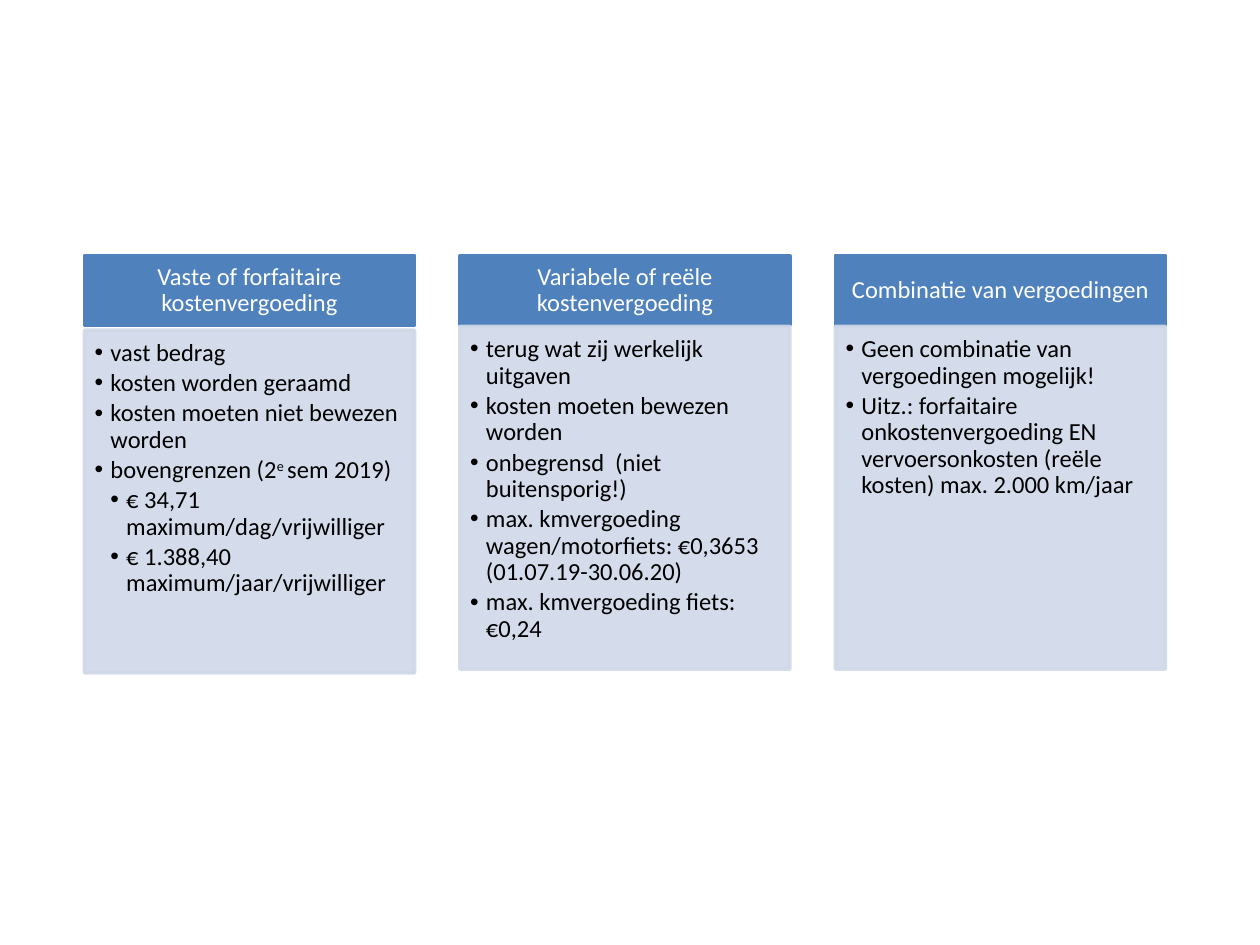
from lxml import etree
from pptx import Presentation
from pptx.dml.color import RGBColor
from pptx.enum.shapes import MSO_SHAPE
from pptx.enum.text import MSO_ANCHOR, PP_ALIGN
from pptx.oxml.ns import qn
from pptx.util import Pt

RECTANGLE = MSO_SHAPE.RECTANGLE
TOP, MIDDLE = MSO_ANCHOR.TOP, MSO_ANCHOR.MIDDLE
LEFT, CENTER = PP_ALIGN.LEFT, PP_ALIGN.CENTER

BLUE = RGBColor(0x4F, 0x81, 0xBD)
PALE_BLUE = RGBColor(0xD0, 0xD8, 0xE8)
WHITE = RGBColor(0xFF, 0xFF, 0xFF)
BLACK = RGBColor(0x00, 0x00, 0x00)

# Column grid, in points
COLUMN_LEFT, COLUMN_WIDTH, COLUMN_PITCH = 48.24, 188.64, 214.56
HEADER_TOP, HEADER_HEIGHT = 146.16, 39.6
BODY_HEIGHT = 195.84
INDENT = 9

# Heading, top of the body, and bullets as (level, text)
COLUMNS = [
    ("Vaste of forfaitaire kostenvergoeding", 188.64, [
        (1, "vast bedrag"),
        (1, "kosten worden geraamd"),
        (1, "kosten moeten niet bewezen worden"),
        (1, "bovengrenzen (2^e ^sem 2019)"),  # superscript between carets
        (2, "€ 34,71 maximum/dag/vrijwilliger"),
        (2, "€ 1.388,40 maximum/jaar/vrijwilliger"),
    ]),
    ("Variabele of reële kostenvergoeding", 186.48, [
        (1, "terug wat zij werkelijk uitgaven"),
        (1, "kosten moeten bewezen worden"),
        (1, "onbegrensd  (niet buitensporig!)"),
        (1, "max. kmvergoeding wagen/motorfiets: €0,3653 (01.07.19-30.06.20)"),
        (1, "max. kmvergoeding fiets: €0,24"),
    ]),
    ("Combinatie van vergoedingen", 186.48, [
        (1, "Geen combinatie van vergoedingen mogelijk!"),
        (1, "Uitz.: forfaitaire onkostenvergoeding EN vervoersonkosten "
            "(reële kosten) max. 2.000 km/jaar"),
    ]),
]


def add_box(left, top, height, color, anchor, insets):
    shape = slide.shapes.add_shape(
        RECTANGLE, Pt(left), Pt(top), Pt(COLUMN_WIDTH), Pt(height))
    shape.shadow.inherit = False
    shape.fill.solid()
    shape.fill.fore_color.rgb = color
    shape.line.color.rgb = color
    shape.line.width = Pt(2)
    frame = shape.text_frame
    frame.word_wrap = True
    frame.vertical_anchor = anchor
    (frame.margin_left, frame.margin_top,
     frame.margin_right, frame.margin_bottom) = [Pt(inset) for inset in insets]
    return shape


def format_paragraph(paragraph, alignment, color):
    paragraph.alignment = alignment
    paragraph.line_spacing = 0.9
    for run in paragraph.runs:
        run.font.name = "Calibri"
        run.font.size = Pt(14)
        run.font.color.rgb = color


presentation = Presentation()
presentation.slide_width, presentation.slide_height = Pt(720), Pt(540)
slide = presentation.slides.add_slide(presentation.slide_layouts[6])

for index, (heading, body_top, bullets) in enumerate(COLUMNS):
    left = COLUMN_LEFT + index * COLUMN_PITCH

    # Column header
    header = add_box(left, HEADER_TOP, HEADER_HEIGHT, BLUE, MIDDLE,
                     (7.84, 4.48, 7.84, 4.48))
    header.text_frame.text = heading
    format_paragraph(header.text_frame.paragraphs[0], CENTER, WHITE)

    # Column body, slightly transparent
    body = add_box(left, body_top, BODY_HEIGHT, PALE_BLUE, TOP,
                   (5.88, 5.88, 7.84, 8.82))
    for color_element in body._element.spPr.iter(qn("a:srgbClr")):
        etree.SubElement(color_element, qn("a:alpha"), val="90000")

    # Bullets
    frame = body.text_frame
    for number, (level, text) in enumerate(bullets):
        paragraph = frame.add_paragraph() if number else frame.paragraphs[0]
        for part_number, part in enumerate(text.split("^")):
            run = paragraph.add_run()
            run.text = part
            if part_number % 2:
                run.font._element.set("baseline", "30000")
        format_paragraph(paragraph, LEFT, BLACK)
        paragraph.level = level
        paragraph.space_after = Pt(2.1)
        properties = paragraph._p.get_or_add_pPr()
        properties.set("marL", str(Pt(INDENT * level)))
        properties.set("indent", str(-Pt(INDENT)))
        etree.SubElement(properties, qn("a:buFont"), typeface="Arial")
        etree.SubElement(properties, qn("a:buChar"), char="•")

presentation.save("out.pptx")
